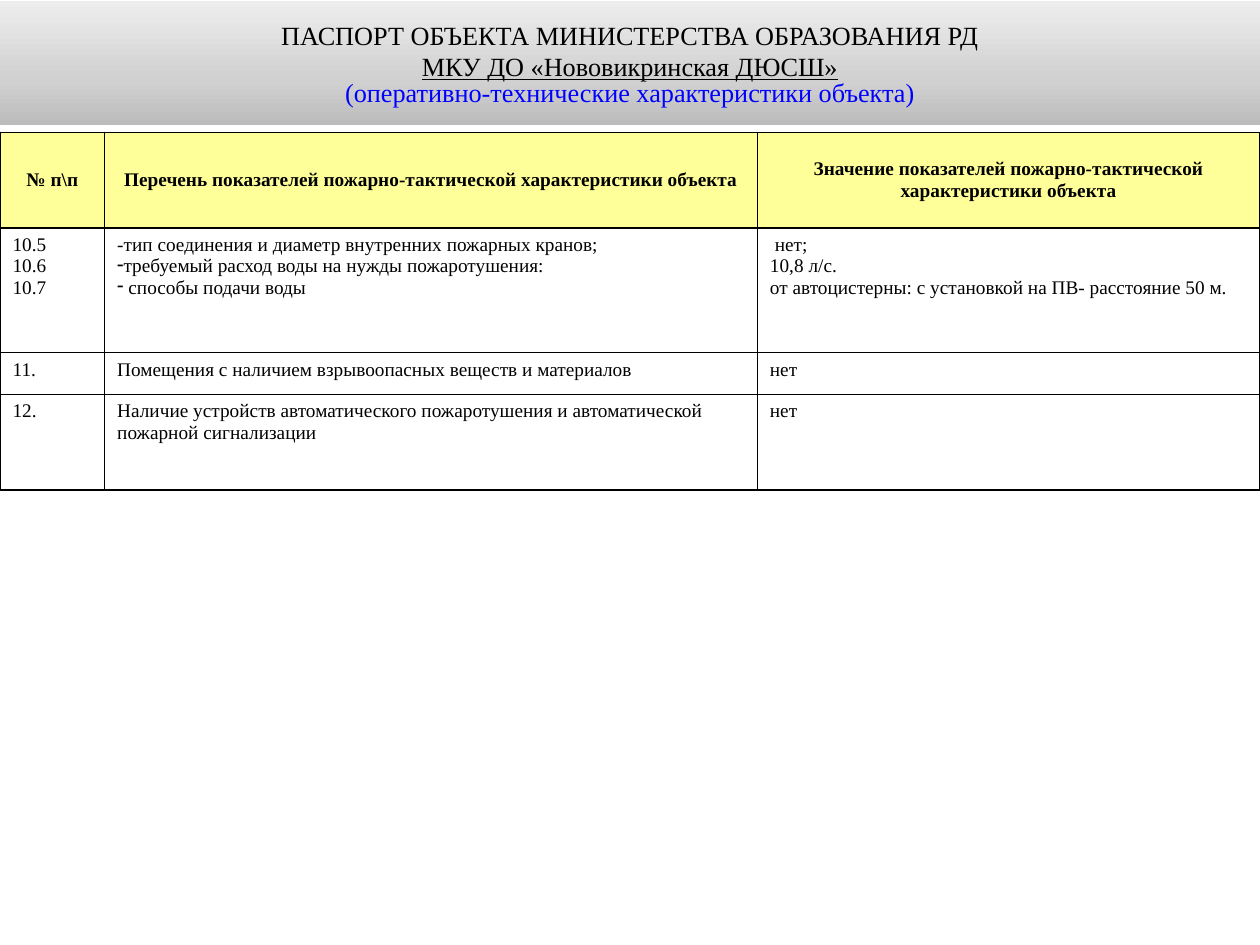
import copy

import pptx
import pptx.dml.color
import pptx.enum.text
import pptx.oxml.ns
import pptx.util
from lxml import etree

Pt = pptx.util.Pt
RGBColor = pptx.dml.color.RGBColor
PP_ALIGN = pptx.enum.text.PP_ALIGN
MSO_ANCHOR = pptx.enum.text.MSO_ANCHOR
qn = pptx.oxml.ns.qn

BLACK = RGBColor(0x00, 0x00, 0x00)
WHITE = RGBColor(0xFF, 0xFF, 0xFF)
BLUE = RGBColor(0x00, 0x00, 0xFF)
YELLOW = RGBColor(0xFF, 0xFF, 0x99)
BANNER_STOPS = [
    (0, RGBColor(0xBC, 0xBC, 0xBC)),
    (0.35, RGBColor(0xD0, 0xD0, 0xD0)),
    (1, RGBColor(0xED, 0xED, 0xED)),
]
FONT = "Times New Roman"
BULLET = "•-"  # marks a paragraph that takes a dash bullet

# Text, font colour, underline, line spacing
TITLE_LINES = [
    ("ПАСПОРТ ОБЪЕКТА МИНИСТЕРСТВА ОБРАЗОВАНИЯ РД", BLACK, False, 1.0),
    ("МКУ ДО «Нововикринская ДЮСШ»", BLACK, True, 1.0),
    ("(оперативно-технические характеристики объекта)", BLUE, False, 0.8),
]
COLUMN_WIDTHS = [59.8, 373, 287.2]
ROW_HEIGHTS = [54.7, 71.3, 23.8, 54.7]
ROWS = [
    [
        ["№ п\\п"],
        ["Перечень показателей пожарно-тактической характеристики объекта"],
        ["Значение показателей пожарно-тактической характеристики объекта"],
    ],
    [
        ["10.5", "10.6", "10.7"],
        [
            "-тип соединения и диаметр внутренних пожарных кранов;",
            BULLET + "требуемый расход воды на нужды пожаротушения:",
            BULLET + " способы подачи воды",
        ],
        [" нет;", "10,8 л/с.", "от автоцистерны: с установкой на ПВ- расстояние 50 м."],
    ],
    [["11."], ["Помещения с наличием взрывоопасных веществ и материалов"], ["нет"]],
    [
        ["12."],
        ["Наличие устройств автоматического пожаротушения и автоматической пожарной сигнализации"],
        ["нет"],
    ],
]


def apply_format(target, values):
    for name, value in values.items():
        setattr(target, name, value)


def write_paragraph(text_frame, index, text, paragraph_format, font_format, color):
    paragraph = text_frame.paragraphs[0] if index == 0 else text_frame.add_paragraph()
    apply_format(paragraph, {"space_before": Pt(0), "space_after": Pt(0), **paragraph_format})
    if text.startswith(BULLET):
        text = text.removeprefix(BULLET)
        bullet = etree.SubElement(paragraph._p.get_or_add_pPr(), qn("a:buChar"))
        bullet.set("char", "-")
    run = paragraph.add_run()
    run.text = text
    apply_format(run.font, {"name": FONT, **font_format})
    run.font.color.rgb = color


def fill_banner(fill):
    fill.gradient()
    fill.gradient_angle = 90
    # The default gradient has two stops, the banner has three
    stop = fill.gradient_stops[0]._gs
    stop.addnext(copy.deepcopy(stop))
    for gradient_stop, (position, color) in zip(fill.gradient_stops, BANNER_STOPS):
        gradient_stop.position = position
        gradient_stop.color.rgb = color


def build_title(slide, left, top, width, height):
    title = slide.shapes.title
    apply_format(title, {"left": Pt(left), "top": Pt(top), "width": Pt(width), "height": Pt(height)})
    fill_banner(title.fill)
    text_frame = title.text_frame
    apply_format(text_frame, {
        "word_wrap": True,
        "auto_size": pptx.enum.text.MSO_AUTO_SIZE.NONE,
        "vertical_anchor": MSO_ANCHOR.MIDDLE,
        "margin_left": Pt(6.5), "margin_right": Pt(6.5),
        "margin_top": Pt(3.6), "margin_bottom": Pt(3.6),
    })
    for index, (text, color, underline, spacing) in enumerate(TITLE_LINES):
        write_paragraph(text_frame, index, text,
                        {"alignment": PP_ALIGN.CENTER, "line_spacing": spacing},
                        {"size": Pt(15), "underline": underline}, color)


def add_borders(cell):
    properties = cell._tc.get_or_add_tcPr()
    for index, side in enumerate(("a:lnL", "a:lnR", "a:lnT", "a:lnB")):
        line = etree.Element(qn(side), w=str(Pt(1)))
        solid = etree.SubElement(line, qn("a:solidFill"))
        etree.SubElement(solid, qn("a:srgbClr"), val=str(BLACK))
        properties.insert(index, line)


def build_table(slide, left, top, width, height):
    table = slide.shapes.add_table(
        len(ROWS), len(COLUMN_WIDTHS), Pt(left), Pt(top), Pt(width), Pt(height)).table
    for column, column_width in zip(table.columns, COLUMN_WIDTHS):
        column.width = Pt(column_width)
    for row_index, (row, row_height) in enumerate(zip(table.rows, ROW_HEIGHTS)):
        row.height = Pt(row_height)
        is_header = row_index == 0
        for cell, lines in zip(row.cells, ROWS[row_index]):
            apply_format(cell, {
                "vertical_anchor": MSO_ANCHOR.MIDDLE if is_header else MSO_ANCHOR.TOP,
                "margin_left": Pt(7.2), "margin_right": Pt(7.2),
                "margin_top": Pt(3.6), "margin_bottom": Pt(3.6),
            })
            cell.fill.solid()
            cell.fill.fore_color.rgb = YELLOW if is_header else WHITE
            add_borders(cell)
            alignment = PP_ALIGN.CENTER if is_header else PP_ALIGN.LEFT
            for index, text in enumerate(lines):
                write_paragraph(cell.text_frame, index, text, {"alignment": alignment},
                                {"size": Pt(11), "bold": is_header}, BLACK)


def main():
    presentation = pptx.Presentation()
    apply_format(presentation, {"slide_width": Pt(720), "slide_height": Pt(540)})
    slide = presentation.slides.add_slide(presentation.slide_layouts.get_by_name("Title Only"))
    slide.background.fill.solid()
    slide.background.fill.fore_color.rgb = WHITE
    # Banner across the top, table of characteristics below it
    build_title(slide, 0, 0.7, 720, 70.6)
    build_table(slide, 0, 75.6, 720, sum(ROW_HEIGHTS))
    presentation.save("out.pptx")


if __name__ == "__main__":
    main()
